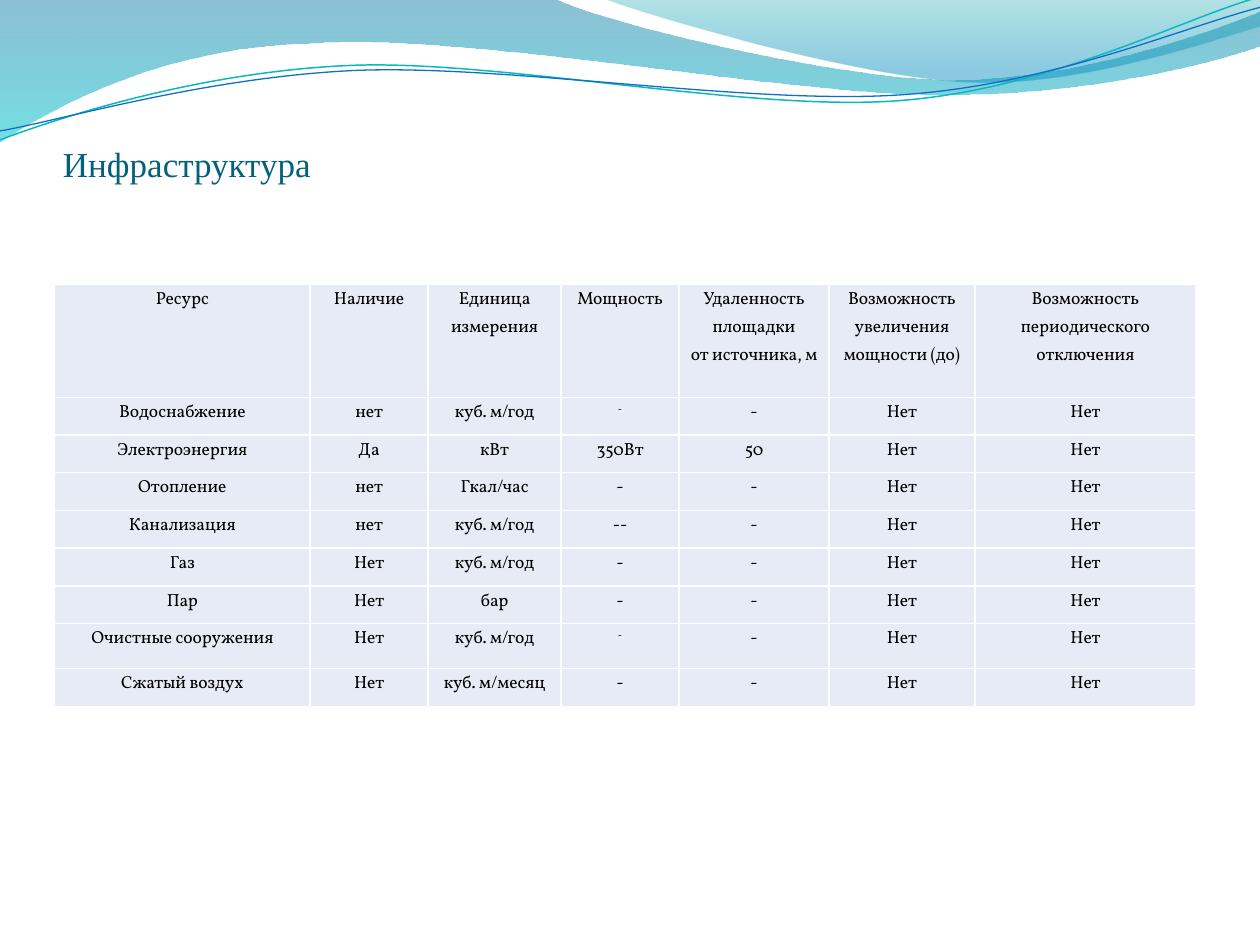
import math

import pptx
import pptx.dml.color
import pptx.enum.text
import pptx.oxml
import pptx.oxml.ns
import pptx.util

Cm, Pt = pptx.util.Cm, pptx.util.Pt
RGB = pptx.dml.color.RGBColor.from_string
qn = pptx.oxml.ns.qn
XMLNS = pptx.oxml.ns.nsdecls("a")
COLORS = {
    "wave_top": "0074A1", "wave_bottom": "00C6CF",
    "crest_top": "00A1A9", "crest_bottom": "008BBF",
    "teal_line": "0AB8BF", "blue_line": "0F6FC6",
    "title": "04617B", "cell": "E7EBF5", "border": "FFFFFF", "text": "000000",
}


def add_outline(start, segments, close):
    """Segments hold one point for a straight line or three for a cubic curve."""
    builder = slide.shapes.build_freeform(Cm(start[0]), Cm(start[1]), scale=1.0)
    builder.add_line_segments(
        [(Cm(x), Cm(y)) for segment in segments for x, y in segment], close=close)
    outline = builder.convert_to_shape()
    outline.shadow.inherit = False
    # Join each run of three points into one curve
    lines = iter(list(outline._element.iter(qn("a:lnTo"))))
    for segment in segments:
        group = [next(lines) for _ in segment]
        if len(group) == 3:
            curve = pptx.oxml.parse_xml(f"<a:cubicBezTo {XMLNS}/>")
            group[0].addprevious(curve)
            for line in group:
                curve.append(line[0])
                line.getparent().remove(line)
    return outline


deck = pptx.Presentation()
deck.slide_width, deck.slide_height = Cm(25.4), Cm(19.05)
slide = deck.slides.add_slide(deck.slide_layouts[6])

# Translucent waves: start, segments, (colour, position, opacity %) stops
waves = [
    ((0, 0), [
        [(11.18, -0.03)],
        [(12.09, 0.43), (16.87, 1.6), (19.25, 1.6)],
        [(21.67, 1.6), (24.33, 0.66), (25.4, 0.23)],
        [(25.43, 0.91)],
        [(24.97, 1.12), (22.1, 1.93), (18.95, 1.91)],
        [(15.8, 1.91), (9.7, 0.71), (6.53, 0.86)],
        [(3.28, 0.91), (1.17, 2.11), (-0.03, 2.87)],
    ], [("wave_top", 0, 45), ("wave_bottom", 1, 55)]),
    ((12.17, -0.03), [
        [(12.93, 0.28), (17.32, 1.57), (19.53, 1.65)],
        [(21.74, 1.75), (24.41, 0.81), (25.4, 0.53)],
        [(25.4, 0)],
    ], [("crest_top", 0, 30), ("crest_bottom", 0.8, 45)]),
]
for start, segments, stops in waves:
    wave = add_outline(start, segments, close=True)
    wave.line.fill.background()
    wave.fill.gradient()
    wave.fill.gradient_angle = 270
    for stop, (color, position, _) in zip(wave.fill.gradient_stops, stops):
        stop.color.rgb = RGB(COLORS[color])
        stop.position = position
    for tint, (_, _, opacity) in zip(wave._element.spPr.iter(qn("a:srgbClr")), stops):
        tint.append(pptx.oxml.parse_xml(f'<a:alpha {XMLNS} val="{opacity * 1000}"/>'))

# Thin swooshes, tilted about their centre
TILT = 2.7
cos, sin = math.cos(math.radians(TILT)), math.sin(math.radians(TILT))
swooshes = [
    ("teal_line", 0.85, (12.67, 1.46), (0, 2.82), [
        [(1.22, 2.36), (4.01, 1.45), (7.04, 1.32)],
        [(10.03, 1.19), (15.06, 2.26), (18.11, 2.03)],
        [(21.16, 1.8), (23.83, 0.38), (25.35, -0.05)],
    ]),
    ("blue_line", 0.75, (12.7, 1.5), (0, 2.64), [
        [(1.19, 2.44), (4.17, 1.55), (7.19, 1.42)],
        [(10.24, 1.3), (15.16, 2.13), (18.21, 1.91)],
        [(21.23, 1.7), (23.9, 0.53), (25.4, 0.15)],
    ]),
]
for color, width, (cx, cy), start, segments in swooshes:
    (level_start,), *level = [
        [(cx + (x - cx) * cos - (y - cy) * sin, cy + (x - cx) * sin + (y - cy) * cos)
         for x, y in segment]
        for segment in [[start]] + segments]
    swoosh = add_outline(level_start, level, close=False)
    swoosh.rotation = 360 - TILT
    swoosh.fill.background()
    swoosh.line.color.rgb = RGB(COLORS[color])
    swoosh.line.width = Pt(width)

# Title
title = slide.shapes.add_textbox(Cm(1.27), Cm(1.94), Cm(22.86), Cm(1.78)).text_frame
title.word_wrap = True
title.vertical_anchor = pptx.enum.text.MSO_ANCHOR.BOTTOM
title.margin_left = title.margin_right = title.margin_bottom = 0
title.margin_top = Cm(0.13)
heading = title.paragraphs[0].add_run()
heading.text = "Инфраструктура"
heading.font.name = "Times New Roman"
heading.font.size = Pt(20)
heading.font.color.rgb = RGB(COLORS["title"])

# Resource table: "^" marks a superscript
resources = [
    ["Ресурс", "Наличие", "Единица\nизмерения", "Мощность",
     "Удаленность\nплощадки\nот источника, м",
     "Возможность\nувеличения\nмощности (до)",
     "Возможность\nпериодического\nотключения"],
]
for name, available, unit, power, distance in [
    ("Водоснабжение", "нет", "куб. м/год", "^-", "-"),
    ("Электроэнергия", "Да", "кВт", "350Вт", "50"),
    ("Отопление", "нет", "Гкал/час", "-", "-"),
    ("Канализация", "нет", "куб. м/год", "--", "-"),
    ("Газ", "Нет", "куб. м/год", "-", "-"),
    ("Пар", "Нет", "бар", "-", "-"),
    ("Очистные сооружения", "Нет", "куб. м/год", "^-", "-"),
    ("Сжатый воздух", "Нет", "куб. м/месяц", "-", "-"),
]:
    resources.append([name, available, unit, power, distance, "Нет", "Нет"])

column_widths = [5.15, 2.38, 2.68, 2.38, 3.02, 2.94, 4.46]
row_heights = [2.27] + [0.76] * 6 + [0.91, 0.76]
table = slide.shapes.add_table(
    len(resources), len(column_widths), Cm(1.1), Cm(5.74),
    Cm(sum(column_widths)), Cm(sum(row_heights))).table
for column, width in zip(table.columns, column_widths):
    column.width = Cm(width)
for row, height, entries in zip(table.rows, row_heights, resources):
    row.height = Cm(height)
    for cell, entry in zip(row.cells, entries):
        cell.margin_left = cell.margin_right = Cm(0.13)
        cell.margin_top = cell.margin_bottom = 0
        for number, words in enumerate(entry.split("\n")):
            frame = cell.text_frame
            line = frame.add_paragraph() if number else frame.paragraphs[0]
            line.alignment = pptx.enum.text.PP_ALIGN.CENTER
            line.line_spacing = 1.15
            run = line.add_run()
            run.text = words.lstrip("^")
            run.font.name = "Vollkorn"
            run.font.size = Pt(10)
            run.font.bold = False
            run.font.color.rgb = RGB(COLORS["text"])
            if words.startswith("^"):
                run._r.get_or_add_rPr().set("baseline", "30000")
        properties = cell._tc.get_or_add_tcPr()
        for side in ("lnL", "lnR", "lnT", "lnB"):
            properties.append(pptx.oxml.parse_xml(
                f'<a:{side} {XMLNS} w="12700"><a:solidFill>'
                f'<a:srgbClr val="{COLORS["border"]}"/></a:solidFill></a:{side}>'))
        cell.fill.solid()
        cell.fill.fore_color.rgb = RGB(COLORS["cell"])

deck.save("out.pptx")
